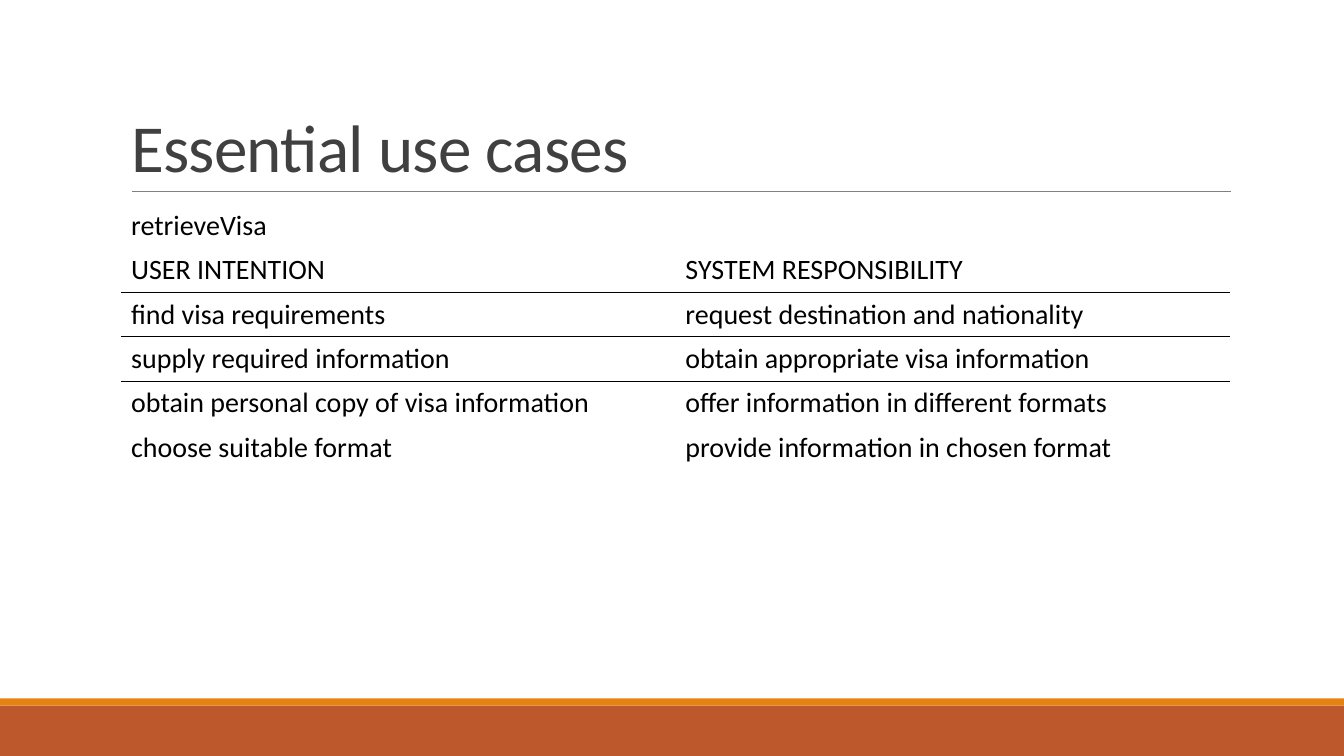
from dataclasses import dataclass

from lxml.etree import SubElement
from pptx import Presentation
from pptx.dml.color import RGBColor as Color
from pptx.enum.shapes import MSO_CONNECTOR as Connector, MSO_SHAPE as Shape
from pptx.enum.text import MSO_ANCHOR as Anchor, MSO_AUTO_SIZE as AutoSize, PP_ALIGN as Align
from pptx.oxml.ns import qn
from pptx.util import Cm, Pt


@dataclass(frozen=True)
class Theme:
    font: str = "Calibri"
    title_size: float = 48
    table_size: float = 20
    title: str = "404040"
    text: str = "000000"
    rule: str = "808080"
    band: str = "BD582C"
    stripe: str = "E48312"


@dataclass(frozen=True)
class Box:
    left: float
    top: float
    width: float
    height: float

    def lengths(self):
        return Cm(self.left), Cm(self.top), Cm(self.width), Cm(self.height)


THEME = Theme()
SLIDE = Box(0, 0, 33.87, 19.05)
TITLE = Box(3.05, 0.79, 27.94, 4.04)
USE_CASE = Box(3.05, 5.13, 27.94, 6.72)
FOOTER = Box(0, 17.6, SLIDE.width, 1.45)

STEPS = [
    ("retrieveVisa", ""),
    ("USER INTENTION", "SYSTEM RESPONSIBILITY"),
    ("find visa requirements", "request destination and nationality"),
    ("supply required information", "obtain appropriate visa information"),
    ("obtain personal copy of visa information", "offer information in different formats"),
    ("choose suitable format", "provide information in chosen format"),
]
RULED_ROWS = (1, 2)  # rows with a line below them
PLAIN_TABLE = "{2D5ABB26-0587-4C30-8999-92F81FD0307C}"


def add_span(para, text, size, color):
    span = para.add_run()
    span.text = text
    span.font.name = THEME.font
    span.font.size = Pt(size)
    span.font.color.rgb = Color.from_string(color)
    return span


def add_footer(page, box):
    stripe_height = 0.18
    band = Box(box.left, box.top + stripe_height, box.width, box.height - stripe_height)
    stripe = Box(box.left, box.top, box.width, stripe_height)
    for part, color in ((band, THEME.band), (stripe, THEME.stripe)):
        bar = page.shapes.add_shape(Shape.RECTANGLE, *part.lengths())
        bar.shadow.inherit = False
        bar.fill.solid()
        bar.fill.fore_color.rgb = Color.from_string(color)
        bar.line.fill.background()


def add_title(page, box, text):
    # Heading
    title = page.shapes.title
    title.left, title.top, title.width, title.height = box.lengths()
    frame = title.text_frame
    frame.word_wrap = True
    frame.auto_size = AutoSize.NONE
    frame.vertical_anchor = Anchor.BOTTOM
    para = frame.paragraphs[0]
    para.alignment = Align.LEFT
    para.line_spacing = 0.85
    span = add_span(para, text, THEME.title_size, THEME.title)
    span._r.get_or_add_rPr().set("spc", "-50")

    # Rule under the heading
    left, right = Cm(box.left + 0.28), Cm(box.left + box.width + 0.02)
    bottom = Cm(box.top + box.height)
    rule = page.shapes.add_connector(Connector.STRAIGHT, left, bottom, right, bottom)
    rule.line.color.rgb = Color.from_string(THEME.rule)
    rule.line.width = Pt(0.5)
    SubElement(rule._element.spPr, qn("a:effectLst"))


def add_border(cell, side):
    border = SubElement(cell._tc.get_or_add_tcPr(), qn(f"a:{side}"), w=str(Pt(1)))
    fill = SubElement(border, qn("a:solidFill"))
    SubElement(fill, qn("a:srgbClr"), val=THEME.text)


def add_use_case(page, box, steps):
    table = page.shapes.add_table(len(steps), len(steps[0]), *box.lengths()).table
    table.first_row = table.horz_banding = False
    table._tbl.tblPr.find(qn("a:tableStyleId")).text = PLAIN_TABLE
    for column in table.columns:
        column.width = Cm(box.width / len(steps[0]))
    for index, (row, texts) in enumerate(zip(table.rows, steps)):
        row.height = Cm(box.height / len(steps))
        for cell, text in zip(row.cells, texts):
            if index - 1 in RULED_ROWS:
                add_border(cell, "lnT")
            if index in RULED_ROWS:
                add_border(cell, "lnB")
            cell.fill.background()
            if text:
                add_span(cell.text_frame.paragraphs[0], text, THEME.table_size, THEME.text)


def main():
    deck = Presentation()
    deck.slide_width, deck.slide_height = Cm(SLIDE.width), Cm(SLIDE.height)
    page = deck.slides.add_slide(deck.slide_layouts.get_by_name("Title Only"))
    add_footer(page, FOOTER)
    add_title(page, TITLE, "Essential use cases")
    add_use_case(page, USE_CASE, STEPS)
    deck.save("out.pptx")


if __name__ == "__main__":
    main()
